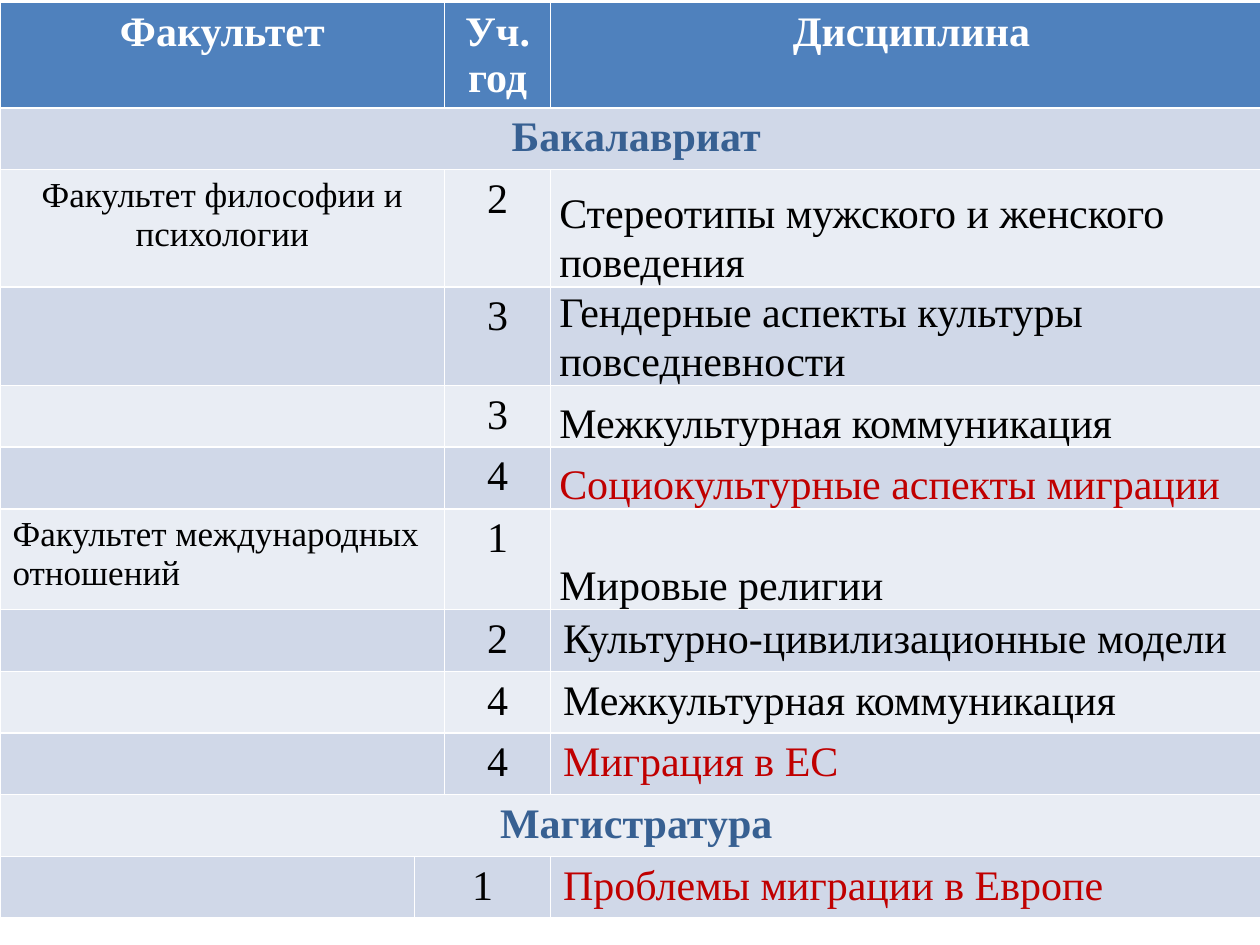
from pptx import Presentation
from pptx.dml.color import RGBColor
from pptx.enum.text import MSO_ANCHOR, PP_ALIGN
from pptx.util import Inches, Pt

LEFT, CENTER = PP_ALIGN.LEFT, PP_ALIGN.CENTER
BOTTOM = MSO_ANCHOR.BOTTOM

THEME = {
    "font": "Times New Roman",
    "main_size": 24,
    "faculty_size": 20,
    "header_text": "FFFFFF",
    "section_text": "376092",
    "text": "000000",
    "accent": "C00000",
    "header_fill": "4F81BD",
    "bands": ("D0D8E8", "E9EDF4"),
}

HEADER = ("Факультет", "Уч. год", "Дисциплина")
BACHELOR = "Бакалавриат"
MASTER = "Магистратура"
PHILOSOPHY = "Факультет философии и психологии"
RELATIONS = "Факультет международных отношений"

COURSES = {
    BACHELOR: [
        (PHILOSOPHY, "2", "Стереотипы мужского и женского поведения"),
        ("", "3", "Гендерные аспекты культуры повседневности"),
        ("", "3", "Межкультурная коммуникация"),
        ("", "4", "Социокультурные аспекты миграции"),
        (RELATIONS, "1", "Мировые религии"),
        ("", "2", "Культурно-цивилизационные модели"),
        ("", "4", "Межкультурная коммуникация"),
        ("", "4", "Миграция в ЕС"),
    ],
    MASTER: [("", "1", "Проблемы миграции в Европе")],
}
HIGHLIGHTED = {
    "Социокультурные аспекты миграции",
    "Миграция в ЕС",
    "Проблемы миграции в Европе",
}
LOW_COURSES = COURSES[BACHELOR][:5]
FACULTY_ALIGN = {PHILOSOPHY: CENTER, RELATIONS: LEFT}

COLUMN_WIDTHS = (3.29, 0.13, 0.84, 5.73)
ROW_HEIGHT = 0.49
HEADER_HEIGHT = 0.55
FACULTY_HEIGHTS = {PHILOSOPHY: 0.93, RELATIONS: 0.8}
TABLE_TOP = 0.02


def write(cell, text, color, size="main_size", align=CENTER, bold=False):
    if not text:
        return
    cell.text = text
    paragraph = cell.text_frame.paragraphs[0]
    paragraph.alignment = align
    font = paragraph.font
    font.name = THEME["font"]
    font.size = Pt(THEME[size])
    font.bold = bold
    font.color.rgb = RGBColor.from_string(THEME[color])


def sink(cell):
    cell.vertical_anchor = BOTTOM
    cell.margin_left = cell.margin_right = Inches(0.07)
    cell.margin_top = cell.margin_bottom = 0
    cell.text_frame.paragraphs[0].line_spacing = 1.06


def fill_header(table):
    table.rows[0].height = Inches(HEADER_HEIGHT)
    table.cell(0, 0).merge(table.cell(0, 1))
    for column, heading in zip((0, 2, 3), HEADER):
        write(table.cell(0, column), heading, "header_text", bold=True)


def fill_section(table, row, section):
    table.cell(row, 0).merge(table.cell(row, 3))
    write(table.cell(row, 0), section, "section_text", bold=True)


def fill_course(table, row, section, course):
    faculty, year, discipline = course
    merge_start = 1 if section == MASTER else 0
    year_column = 1 if section == MASTER else 2
    table.cell(row, merge_start).merge(table.cell(row, merge_start + 1))
    table.rows[row].height = Inches(FACULTY_HEIGHTS.get(faculty, ROW_HEIGHT))
    write(table.cell(row, 0), faculty, "text", "faculty_size",
          FACULTY_ALIGN.get(faculty))
    write(table.cell(row, year_column), year, "text")
    color = "accent" if discipline in HIGHLIGHTED else "text"
    write(table.cell(row, 3), discipline, color, align=LEFT)
    if course in LOW_COURSES:
        sink(table.cell(row, 3))


def main():
    deck = Presentation()
    deck.slide_width, deck.slide_height = Inches(10), Inches(7.5)
    slide = deck.slides.add_slide(deck.slide_layouts[6])

    row_count = 1 + sum(1 + len(courses) for courses in COURSES.values())
    table = slide.shapes.add_table(
        row_count, len(COLUMN_WIDTHS), 0, Inches(TABLE_TOP),
        deck.slide_width, Inches(ROW_HEIGHT * row_count)).table
    for column, width in zip(table.columns, COLUMN_WIDTHS):
        column.width = Inches(width)
    for index, row in enumerate(table.rows):
        row.height = Inches(ROW_HEIGHT)
        color = THEME["bands"][(index - 1) % 2] if index else THEME["header_fill"]
        for cell in row.cells:
            cell.fill.solid()
            cell.fill.fore_color.rgb = RGBColor.from_string(color)

    fill_header(table)
    row = 1
    for section, courses in COURSES.items():
        fill_section(table, row, section)
        for row, course in enumerate(courses, row + 1):
            fill_course(table, row, section, course)
        row += 1

    deck.save("out.pptx")


if __name__ == "__main__":
    main()
